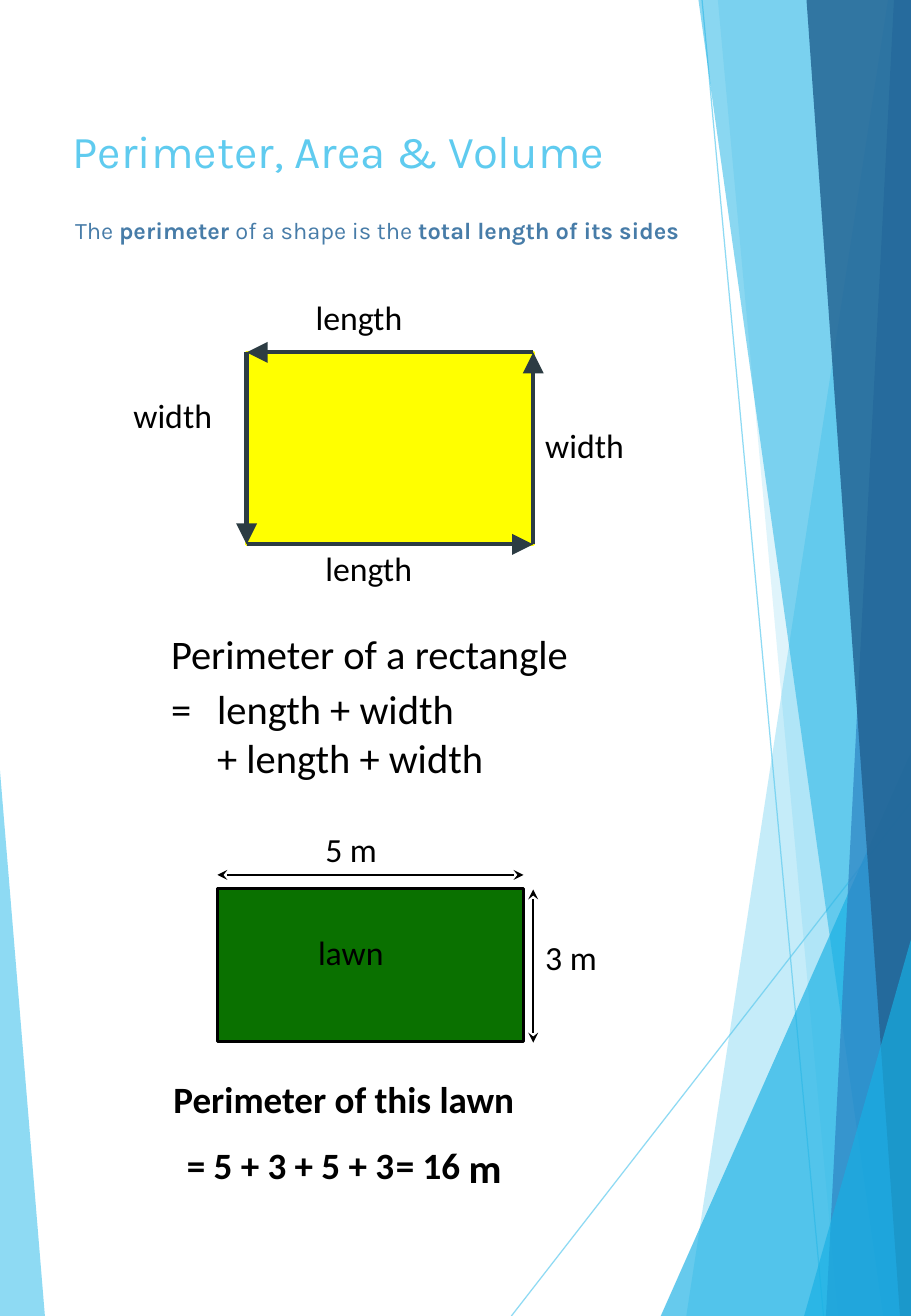
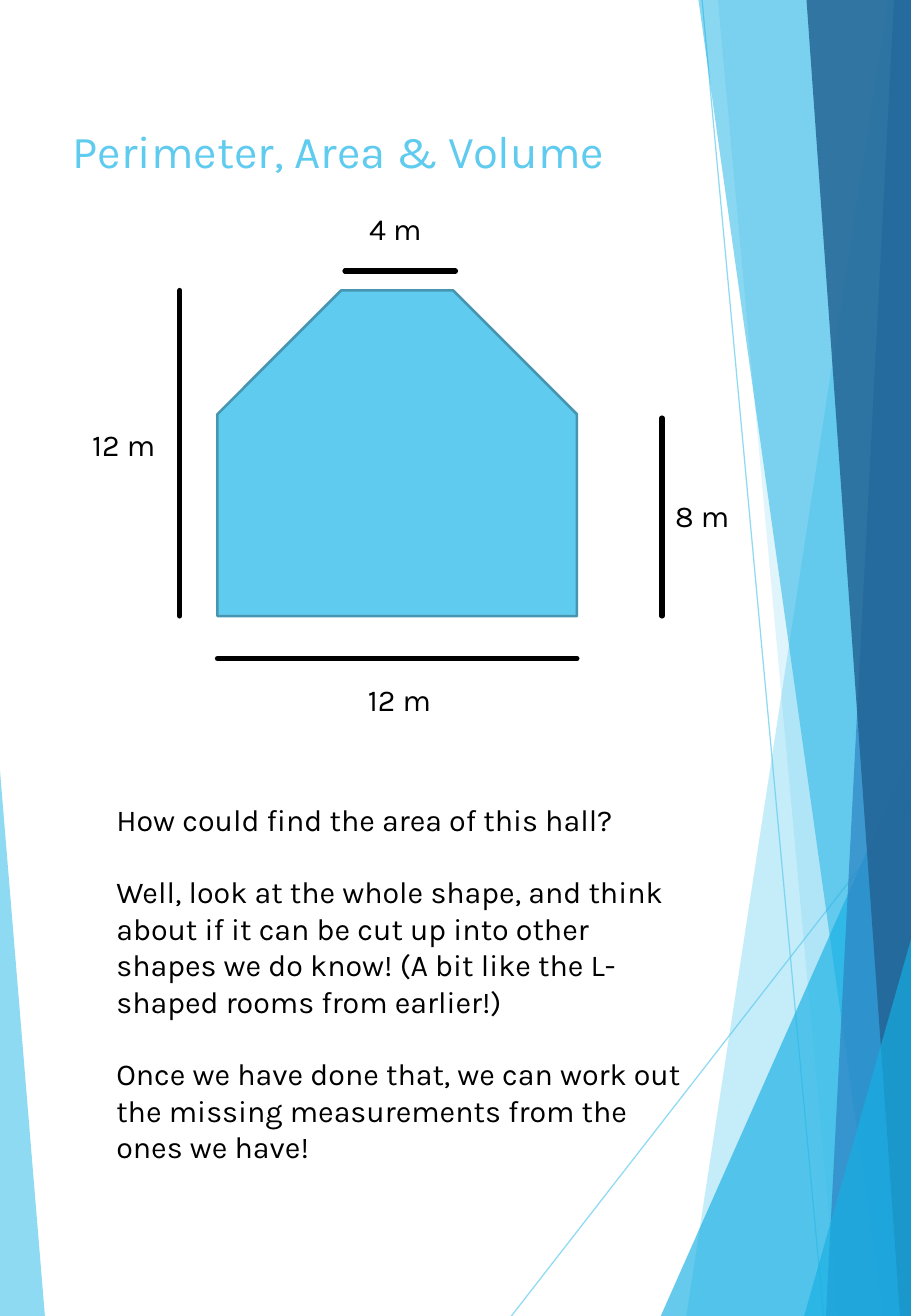
from dataclasses import dataclass
from lxml import etree
from pptx import Presentation
from pptx import util as u
from pptx.dml.color import RGBColor
from pptx.enum import shapes, text
from pptx.oxml import ns

PX = 9144
W, H = 750, 1083


@dataclass(frozen=True)
class Theme:
    sky: str = "5FCBEF"
    cyan: str = "17B0E4"
    blue: str = "2E83C3"
    navy: str = "226292"
    subtitle: str = "477CA8"
    slate: str = "2C3C43"
    outline: str = "4696B1"
    yellow: str = "FFFF00"
    green: str = "0A7100"
    black: str = "000000"
    head: str = "Karla"
    plain: str = "Calibri"
    title_pt: int = 27
    subtitle_pt: int = 14
    hall_pt: int = 18
    label_pt: int = 20
    formula_pt: int = 24
    answer_pt: int = 22


T = Theme()
TITLE = dict(name=T.head, size=T.title_pt, color=T.sky)
SUBTITLE = dict(name=T.head, size=T.subtitle_pt, color=T.subtitle)
HALL = dict(name=T.head, size=T.hall_pt)
LABEL = dict(name=T.plain, size=T.label_pt)
FORMULA = dict(name=T.plain, size=T.formula_pt)
ANSWER = dict(name=T.plain, size=T.answer_pt, bold=True)
UNIT = dict(ANSWER, size=T.formula_pt)


def emu(*px):
    return [u.Emu(v * PX) for v in px]


def within(box, x, y, w, h):
    return box[0] + x, box[1] + y, w, h


def set_alpha(sp, percent):
    color = sp._element.spPr.find(".//" + ns.qn("a:srgbClr"))
    etree.SubElement(color, ns.qn("a:alpha"), val=str(percent * 1000))


def paint(sp, fill, line=None, width=1):
    sp.shadow.inherit = False
    sp.fill.solid()
    sp.fill.fore_color.rgb = RGBColor.from_string(fill)
    if line:
        sp.line.color.rgb = RGBColor.from_string(line)
        sp.line.width = u.Pt(width)
    else:
        sp.line.fill.background()


def draw_shape(s, kind, box, fill, line, width):
    sp = s.shapes.add_shape(kind, *emu(*box))
    paint(sp, fill, line, width)
    return sp


def draw_line(s, start, end, color=T.black, width=3, cap=None, heads=()):
    sp = s.shapes.add_connector(shapes.MSO_CONNECTOR.STRAIGHT,
                                *emu(*start, *end))
    sp.line.color.rgb = RGBColor.from_string(color)
    sp.line.width = u.Pt(width)
    spPr = sp._element.spPr
    ln = spPr.find(ns.qn("a:ln"))
    if cap:
        ln.set("cap", cap)
    for end_name, kind, size in heads:
        etree.SubElement(ln, ns.qn("a:" + end_name), type=kind, w=size,
                         len=size)
    etree.SubElement(spPr, ns.qn("a:effectLst"))
    return sp


def write(s, box, paras, style, gap=0, anchor=text.MSO_ANCHOR.TOP):
    tf = s.shapes.add_textbox(*emu(*box)).text_frame
    tf.word_wrap = True
    tf.vertical_anchor = anchor
    for i, para in enumerate(paras):
        p = tf.add_paragraph() if i else tf.paragraphs[0]
        if i and gap:
            p.space_before = u.Pt(gap)
        for j, part in enumerate(para.split("*")):
            if not part:
                continue
            r = p.add_run()
            r.text = part
            form = dict(style, size=u.Pt(style["size"]))
            color = form.pop("color", T.black)
            if j % 2:
                form["bold"] = True
            for name, value in form.items():
                setattr(r.font, name, value)
            r.font.color.rgb = RGBColor.from_string(color)
    return tf


BANDS = [
    (T.sky, 70, [(0, 634), (37, H), (0, H)]),
    (T.sky, 36, [(731, 0), (565, H), (W, H), (W, 0)]),
    (T.sky, 20, [(591, 0), (690, H), (W, H), (W, 0)]),
    (T.cyan, 66, [(544, H), (W, 619), (W, H)]),
    (T.cyan, 50, [(575, 0), (727, H), (W, H), (W, 0)]),
    (T.blue, 70, [(736, 0), (680, H), (W, H), (W, 0)]),
    (T.navy, 82, [(664, 0), (741, H), (W, H), (W, 0)]),
    (T.cyan, 66, [(662, H), (W, 773), (W, H)]),
]


def backdrop(s, box):
    x, y = box[:2]
    for start, end in (((421, H), (W, 660)), ((578, 0), (678, H))):
        sp = draw_line(s, (x + start[0], y + start[1]),
                       (x + end[0], y + end[1]), T.sky, 0.75)
        set_alpha(sp, 70)
    for color, alpha, points in BANDS:
        first, *rest = [(x + px, y + py) for px, py in points]
        builder = s.shapes.build_freeform(*first, scale=PX)
        builder.add_line_segments(rest, close=True)
        sp = builder.convert_to_shape()
        paint(sp, color)
        set_alpha(sp, alpha)


def new_slide(prs):
    s = prs.slides.add_slide(prs.slide_layouts[6])
    backdrop(s, (0, 0, W, H))
    write(s, (50, 96, 521, 72), ["Perimeter, Area & Volume"], TITLE)
    return s


def rectangle_sides(s, box):
    x, y, w, h = box
    draw_shape(s, shapes.MSO_SHAPE.RECTANGLE, box, T.yellow, T.yellow, 2)
    corners = [(x, y), (x, y + h), (x + w, y + h), (x + w, y)]
    for start, end in zip(corners, corners[1:] + corners[:1]):
        draw_line(s, start, end, T.slate, 2.5,
                  heads=[("tailEnd", "triangle", "lg")])
    for dx, dy, word in ((47, -51, "length"), (-103, 30, "width"),
                         (55, 156, "length"), (w, 55, "width")):
        write(s, within(box, dx, dy, 150, 44), [word], LABEL)


def rectangle_formula(s, box):
    write(s, within(box, 0, 0, 480, 64), ["Perimeter of a rectangle"], FORMULA)
    tf = write(s, within(box, 0, 45, 410, 126),
               ["=\tlength + width", "+ length + width"], FORMULA)
    for p, indent in zip(tf.paragraphs, (-38, 0)):
        pPr = p._p.get_or_add_pPr()
        pPr.set("marL", str(38 * PX))
        pPr.set("indent", str(indent * PX))


def lawn(s, box):
    x, y, w, h = box
    draw_shape(s, shapes.MSO_SHAPE.RECTANGLE, box, T.green, T.black, 2)
    heads = [(end, "stealth", "med") for end in ("headEnd", "tailEnd")]
    for start, end in (((x, y - 11), (x + w, y - 11)),
                       ((x + w + 8, y + 1), (x + w + 8, y + h + 1))):
        draw_line(s, start, end, width=1.5, heads=heads)
    for dx, dy, word in ((73, 31, "lawn"), (79, -54, "5 m"),
                         (w + 8, 35, "3 m")):
        write(s, within(box, dx, dy, 134, 44), [word], LABEL)


def lawn_answer(s, box):
    for dx, dy, w, words, style in (
            (0, 0, 411, "Perimeter of this lawn", ANSWER),
            (11, 54, 319, "= 5 + 3 + 5 + 3", ANSWER),
            (183, 54, 151, "= 16", ANSWER),
            (243, 55, 75, "m", UNIT)):
        write(s, within(box, dx, dy, w, 71), [words], style)


def hall(s, box):
    x, y, w, h = box
    sp = draw_shape(s, shapes.MSO_SHAPE.SNIP_2_SAME_RECTANGLE, box, T.sky,
                    T.outline, 1.5)
    sp.adjustments[0] = 0.38
    sp.adjustments[1] = 0
    right, bottom = x + w, y + h
    for start, end in (((x, bottom + 35), (right, bottom + 35)),
                       ((x - 31, y), (x - 31, bottom)),
                       ((right + 70, y + 105), (right + 70, bottom)),
                       ((x + 105, y - 16), (x + 196, y - 16))):
        draw_line(s, start, end, cap="rnd")
    for dx, dy, words in ((115, -71, "4 m"), (w + 71, 165, "8 m"),
                          (-113, 107, "12 m"), (114, 317, "12 m")):
        write(s, within(box, dx, dy, 90, 40), [words], HALL)


def perimeter_slide(prs):
    s = new_slide(prs)
    write(s, (52, 161, 522, 57),
          ["The *perimeter *of a shape is the *total length of its sides*"],
          SUBTITLE, anchor=text.MSO_ANCHOR.MIDDLE)
    rectangle_sides(s, (203, 290, 236, 158))
    rectangle_formula(s, (131, 513, 480, 171))
    lawn(s, (179, 731, 252, 126))
    lawn_answer(s, (133, 881, 411, 126))


def hall_slide(prs):
    s = new_slide(prs)
    hall(s, (179, 239, 296, 268))
    write(s, (86, 654, 494, 313), [
        "How could find the area of this hall?",
        "Well, look at the whole shape, and think about if it can be cut up "
        "into other shapes we do know! (A bit like the L-shaped rooms from "
        "earlier!)",
        "Once we have done that, we can work out the missing measurements "
        "from the ones we have!",
    ], HALL, gap=21.5)


def main():
    prs = Presentation()
    prs.slide_width, prs.slide_height = emu(W, H)
    perimeter_slide(prs)
    hall_slide(prs)
    prs.save("out.pptx")


if __name__ == "__main__":
    main()
